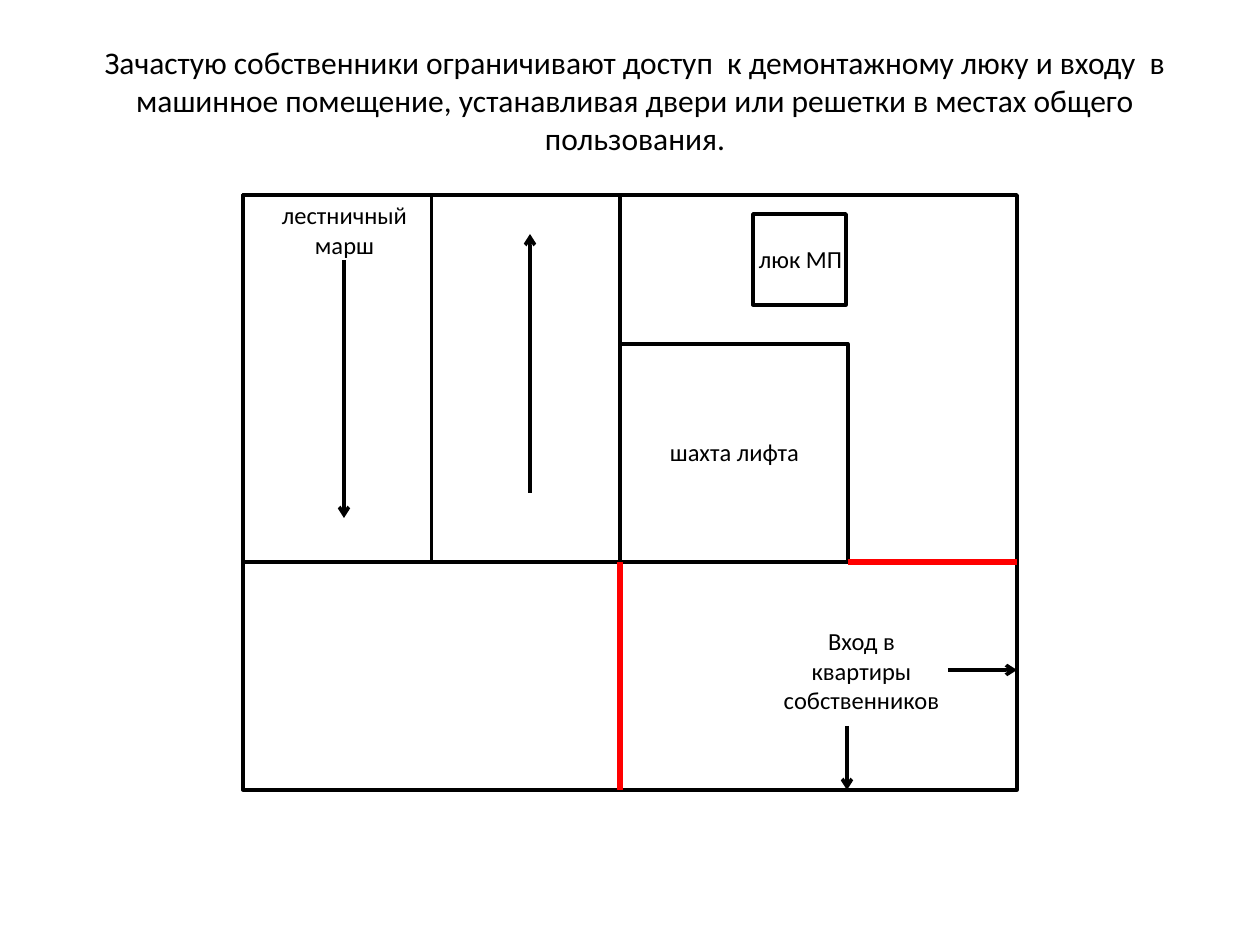
from dataclasses import dataclass

from pptx import Presentation
from pptx.dml.color import RGBColor
from pptx.enum.shapes import MSO_CONNECTOR, MSO_SHAPE
from pptx.enum.text import MSO_AUTO_SIZE, PP_ALIGN
from pptx.oxml.ns import qn
from pptx.util import Emu, Pt
from lxml import etree

RECTANGLE = MSO_SHAPE.RECTANGLE
STRAIGHT = MSO_CONNECTOR.STRAIGHT
CENTER = PP_ALIGN.CENTER
FIT_TEXT = MSO_AUTO_SIZE.SHAPE_TO_FIT_TEXT
TOP, BOTTOM = 0, 2
EMU_PER_PX = 914400 / 126


@dataclass(frozen=True)
class Theme:
    ink: RGBColor = RGBColor(0, 0, 0)
    barrier: RGBColor = RGBColor(255, 0, 0)
    font: str = "Calibri"
    title_size: int = 18
    label_size: int = 14
    wall_width: int = 2
    barrier_width: int = 3


@dataclass(frozen=True)
class Area:
    left: int
    top: int
    width: int
    height: int

    @property
    def right(self) -> int:
        return self.left + self.width

    @property
    def bottom(self) -> int:
        return self.top + self.height


@dataclass(frozen=True)
class Segment:
    x1: int
    y1: int
    x2: int
    y2: int


@dataclass(frozen=True)
class Label:
    text: str
    area: Area


THEME = Theme()
FLOOR = Area(243, 195, 774, 595)
STAIRS = Area(243, 195, 377, 367)
SHAFT = Area(620, 344, 228, 218)
HATCH = Area(753, 214, 93, 91)
STAIRS_MIDDLE = STAIRS.left + STAIRS.width // 2

ARROWS = [
    Segment(344, 260, 344, 518),
    Segment(530, 493, 530, 234),
    Segment(948, 670, FLOOR.right, 670),
    Segment(847, 726, 847, FLOOR.bottom),
]
BARRIERS = [
    Segment(SHAFT.right, SHAFT.bottom, FLOOR.right, SHAFT.bottom),
    Segment(STAIRS.right, STAIRS.bottom, STAIRS.right, FLOOR.bottom),
]
TITLE = Label(
    "Зачастую собственники ограничивают доступ  к демонтажному люку и входу  в "
    "машинное помещение, устанавливая двери или решетки в местах общего пользования.",
    Area(64, 37, 1142, 127),
)
LABELS = [
    Label("лестничный марш", Area(260, 194, 169, 72)),
    Label("люк МП", Area(716, 238, 169, 43)),
    Label("шахта лифта", Area(650, 431, 169, 43)),
    Label("Вход в квартиры собственников", Area(769, 620, 185, 102)),
]


def px(length: int) -> Emu:
    return Emu(round(length * EMU_PER_PX))


def place(area: Area) -> tuple[Emu, Emu, Emu, Emu]:
    return px(area.left), px(area.top), px(area.width), px(area.height)


def add_room(page, area: Area):
    room = page.shapes.add_shape(RECTANGLE, *place(area))
    room.shadow.inherit = False
    room.fill.background()
    room.line.color.rgb = THEME.ink
    room.line.width = Pt(THEME.wall_width)
    return room


def add_line(page, segment: Segment, *, color: RGBColor = THEME.ink,
             width: int = THEME.wall_width, arrow: bool = False):
    connector = page.shapes.add_connector(
        STRAIGHT, px(segment.x1), px(segment.y1), px(segment.x2), px(segment.y2))
    connector.line.color.rgb = color
    connector.line.width = Pt(width)
    if arrow:
        outline = connector.line._get_or_add_ln()
        etree.SubElement(outline, qn("a:tailEnd"), type="arrow")
    etree.SubElement(connector._element.spPr, qn("a:effectLst"))
    return connector


def add_text(page, text: str, *, area: Area, size: int) -> None:
    box = page.shapes.add_textbox(*place(area))
    frame = box.text_frame
    frame.word_wrap = True
    frame.auto_size = FIT_TEXT
    para = frame.paragraphs[0]
    para.alignment = CENTER
    span = para.add_run()
    span.text = text
    span.font.name = THEME.font
    span.font.size = Pt(size)
    span.font.color.rgb = THEME.ink


def main() -> None:
    deck = Presentation()
    deck.slide_width, deck.slide_height = px(1260), px(945)
    page = deck.slides.add_slide(deck.slide_layouts[6])

    add_room(page, FLOOR)
    stairs = add_room(page, STAIRS)
    divider = add_line(
        page, Segment(STAIRS_MIDDLE, STAIRS.top, STAIRS_MIDDLE, STAIRS.bottom))
    divider.begin_connect(stairs, TOP)
    divider.end_connect(stairs, BOTTOM)
    add_room(page, SHAFT)
    add_room(page, HATCH)

    for barrier in BARRIERS:
        add_line(page, barrier, color=THEME.barrier, width=THEME.barrier_width)
    for arrow in ARROWS:
        add_line(page, arrow, arrow=True)

    add_text(page, TITLE.text, area=TITLE.area, size=THEME.title_size)
    for label in LABELS:
        add_text(page, label.text, area=label.area, size=THEME.label_size)

    deck.save("out.pptx")


if __name__ == "__main__":
    main()
